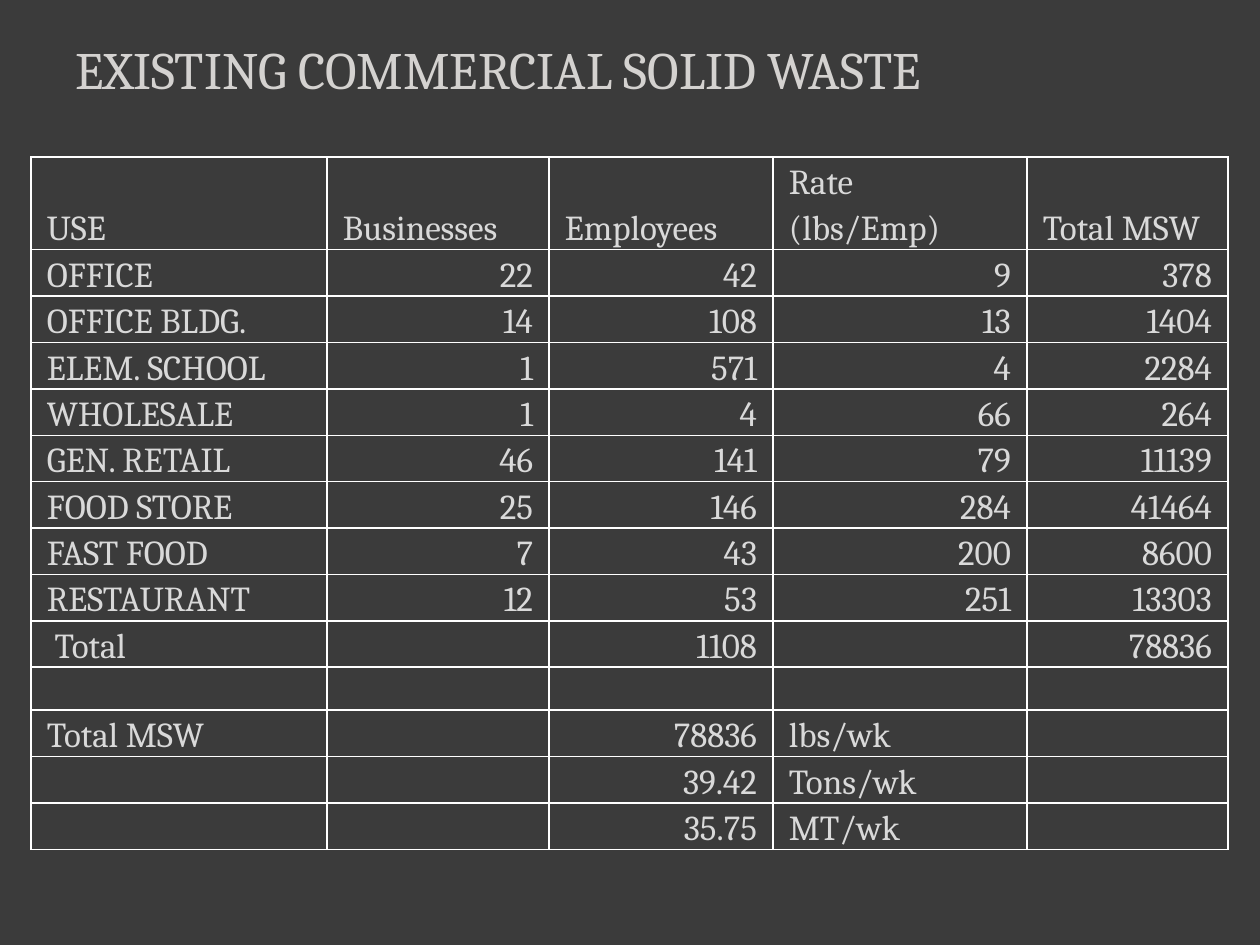
from lxml import etree
from pptx import Presentation
from pptx import util as u
from pptx.dml.color import RGBColor
from pptx.enum import text
from pptx.oxml.ns import qn

# Content
TITLE = "EXISTING COMMERCIAL SOLID WASTE"
ROWS = [
    ("USE", "Businesses", "Employees", "Rate (lbs/Emp)", "Total MSW"),
    ("OFFICE", "22", "42", "9", "378"),
    ("OFFICE BLDG.", "14", "108", "13", "1404"),
    ("ELEM. SCHOOL", "1", "571", "4", "2284"),
    ("WHOLESALE", "1", "4", "66", "264"),
    ("GEN. RETAIL", "46", "141", "79", "11139"),
    ("FOOD STORE", "25", "146", "284", "41464"),
    ("FAST FOOD", "7", "43", "200", "8600"),
    ("RESTAURANT", "12", "53", "251", "13303"),
    (" Total", "", "1108", "", "78836"),
    ("", "", "", "", ""),
    ("Total MSW", "", "78836", "lbs/wk", ""),
    ("", "", "39.42", "Tons/wk", ""),
    ("", "", "35.75", "MT/wk", ""),
]

# Layout in px
PX = u.Inches(1) // 126
SLIDE_SIZE = (1260, 945)
TITLE_BOX = (63, 31, 1144, 147)
TABLE_BOX = (31, 157, 1197, 725)
COLUMN_WIDTHS = (296, 222, 224, 254, 201)
HEADER_HEIGHT, ROW_HEIGHT = 59, 43
CELL_MARGIN = 16 * PX

# Style
FONT = "Cambria"
TITLE_SIZE, CELL_SIZE = u.Pt(30), u.Pt(20)
BACKGROUND = RGBColor(0x3B, 0x3B, 0x3B)
TITLE_COLOR = RGBColor(0xD4, 0xD2, 0xD0)
CELL_COLOR = RGBColor(0xD9, 0xD9, 0xD9)
BORDER_COLOR = RGBColor(0xFF, 0xFF, 0xFF)
BORDER_WIDTH = u.Pt(1)
CELL_FORMAT = {
    "vertical_anchor": text.MSO_ANCHOR.BOTTOM,
    "margin_left": CELL_MARGIN, "margin_right": CELL_MARGIN,
    "margin_top": 0, "margin_bottom": 0,
}
PARAGRAPH_FORMAT = {"line_spacing": 1.15, "space_after": u.Pt(10)}


def apply(target, values):
    for name, value in values.items():
        setattr(target, name, value)


def scaled(box):
    return [length * PX for length in box]


def add_run(paragraph, words, size, color):
    run = paragraph.add_run()
    run.text = words
    apply(run.font, {"name": FONT, "size": size})
    run.font.color.rgb = color


def add_borders(cell):
    properties = cell._tc.get_or_add_tcPr()
    for side in ("a:lnL", "a:lnR", "a:lnT", "a:lnB"):
        line = etree.SubElement(properties, qn(side), w=str(BORDER_WIDTH))
        fill = etree.SubElement(line, qn("a:solidFill"))
        etree.SubElement(fill, qn("a:srgbClr"), val=str(BORDER_COLOR))


def fill_cell(cell, words):
    add_borders(cell)
    cell.fill.background()
    apply(cell, CELL_FORMAT)
    paragraph = cell.text_frame.paragraphs[0]
    apply(paragraph, PARAGRAPH_FORMAT)
    if words:
        numeric = words.replace(".", "").isdigit()
        paragraph.alignment = text.PP_ALIGN.RIGHT if numeric else text.PP_ALIGN.LEFT
        add_run(paragraph, words, CELL_SIZE, CELL_COLOR)
    else:
        # An empty cell keeps the line height of the others
        end = etree.SubElement(paragraph._p, qn("a:endParaRPr"), sz=str(int(CELL_SIZE.pt * 100)))
        etree.SubElement(end, qn("a:latin"), typeface=FONT)


presentation = Presentation()
presentation.slide_width, presentation.slide_height = scaled(SLIDE_SIZE)
slide = presentation.slides.add_slide(presentation.slide_layouts[6])
slide.background.fill.solid()
slide.background.fill.fore_color.rgb = BACKGROUND

# Waste table
table = slide.shapes.add_table(len(ROWS), len(COLUMN_WIDTHS), *scaled(TABLE_BOX)).table
apply(table, {"first_row": False, "horz_banding": False})
for column, width in zip(table.columns, COLUMN_WIDTHS):
    column.width = width * PX
for index, (row, values) in enumerate(zip(table.rows, ROWS)):
    row.height = (ROW_HEIGHT if index else HEADER_HEIGHT) * PX
    for cell, words in zip(row.cells, values):
        fill_cell(cell, words)

# Title
title_frame = slide.shapes.add_textbox(*scaled(TITLE_BOX)).text_frame
title_frame.word_wrap = True
add_run(title_frame.paragraphs[0], TITLE, TITLE_SIZE, TITLE_COLOR)

presentation.save("out.pptx")
